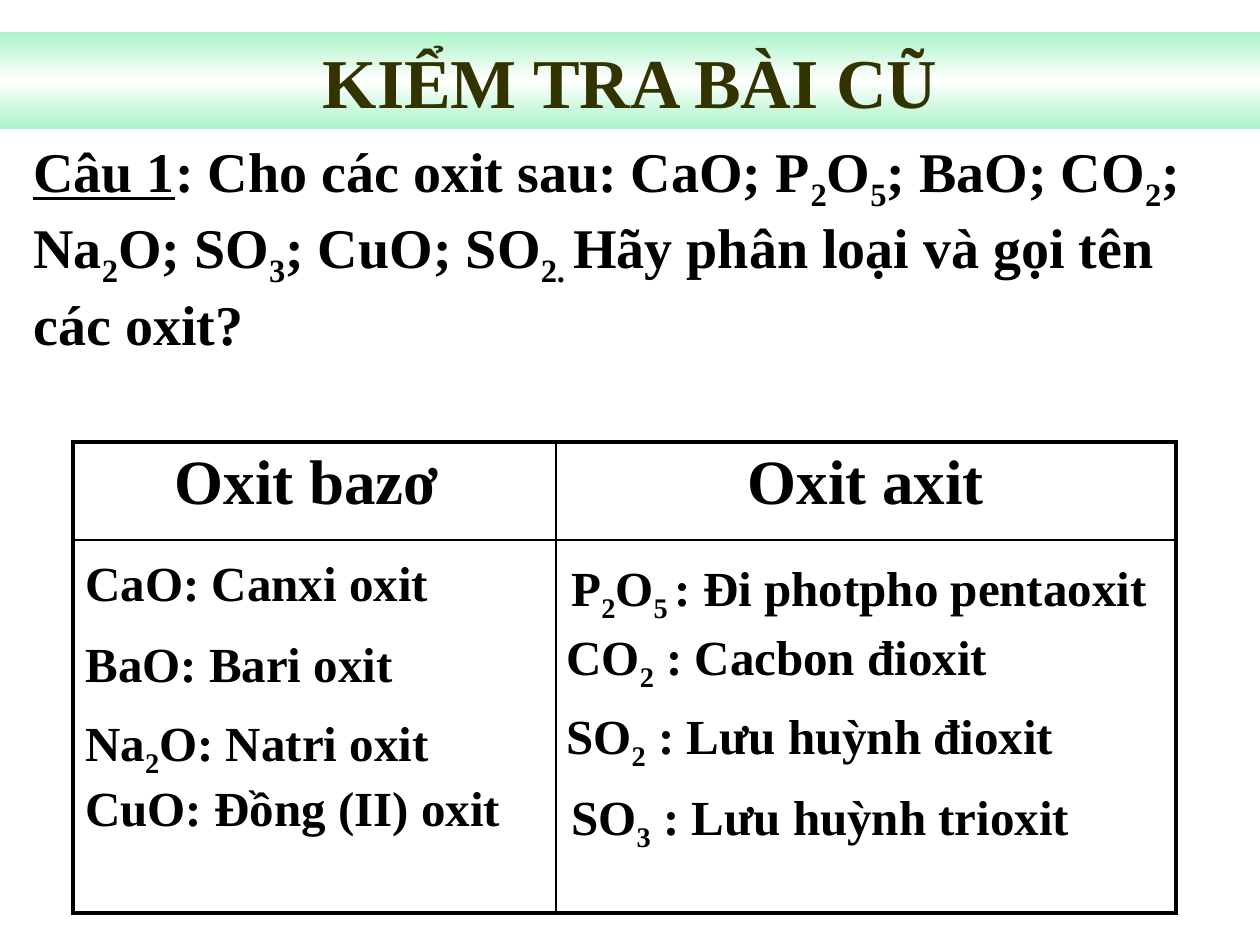
from copy import deepcopy
from dataclasses import dataclass

from lxml import etree
from pptx import Presentation
from pptx.dml.color import RGBColor
from pptx.enum.shapes import MSO_SHAPE
from pptx.enum.text import MSO_ANCHOR, MSO_AUTO_SIZE, PP_ALIGN
from pptx.oxml.ns import qn
from pptx.util import Pt

RECTANGLE = MSO_SHAPE.RECTANGLE
TOP = MSO_ANCHOR.TOP
GROW = MSO_AUTO_SIZE.SHAPE_TO_FIT_TEXT
CENTER = PP_ALIGN.CENTER
LEFT = PP_ALIGN.LEFT

EMU_PER_PX = 914400 / 126
FONT = "Times New Roman"
COLORS = {"text": "000000", "title": "333300", "mint": "AAF4C8", "white": "FFFFFF"}
THICK, THIN = 2.25, 1


@dataclass(frozen=True)
class TextBox:
    left: int
    top: int
    width: int
    height: int
    text: str
    size: int = 28


QUESTION = TextBox(
    21, 130, 1218, 217,
    "<Câu 1>: Cho các oxit sau: CaO; P[2]O[5]; BaO; CO[2]; Na[2]O; SO[3]; "
    "CuO; SO[2. ]Hãy phân loại và gọi tên các oxit?",
    32,
)
ANSWERS = [
    TextBox(73, 546, 599, 72, "CaO: Canxi oxit"),
    TextBox(73, 627, 420, 72, "BaO: Bari oxit"),
    TextBox(73, 706, 420, 72, "Na[2]O: Natri oxit"),
    TextBox(73, 771, 441, 72, "CuO: Đồng (II) oxit"),
    TextBox(559, 551, 617, 72, "P[2]O[5 ]: Đi photpho pentaoxit"),
    TextBox(554, 620, 643, 72, "CO[2] : Cacbon đioxit"),
    TextBox(554, 699, 622, 72, "SO[2] : Lưu huỳnh đioxit"),
    TextBox(559, 780, 617, 72, "SO[3] : Lưu huỳnh trioxit"),
]
HEADERS = ["Oxit bazơ ", "Oxit axit"]
COLUMN_WIDTHS = [483, 620]
ROW_HEIGHTS = [98, 373]


def px(length: int) -> int:
    return round(length * EMU_PER_PX)


def color(name: str) -> RGBColor:
    return RGBColor.from_string(COLORS[name])


def style_font(font, size: int, color_name: str = "text") -> None:
    font.name = FONT
    font.size = Pt(size)
    font.bold = True
    font.color.rgb = color(color_name)


def write_marked_text(paragraph, text: str, size: int) -> None:
    marks = {"[": "subscript", "<": "underline", "]": "", ">": ""}
    pieces = [("", "")]
    for character in text:
        if character in marks:
            pieces.append((marks[character], ""))
        else:
            kind, content = pieces[-1]
            pieces[-1] = (kind, content + character)
    for kind, content in pieces:
        if not content:
            continue
        run = paragraph.add_run()
        run.text = content
        style_font(run.font, size)
        if kind == "underline":
            run.font.underline = True
        elif kind == "subscript":
            run.font._element.set("baseline", "-25000")


def add_text_box(slide, box: TextBox) -> None:
    shape = slide.shapes.add_textbox(px(box.left), px(box.top), px(box.width), px(box.height))
    text_frame = shape.text_frame
    text_frame.word_wrap = True
    text_frame.auto_size = GROW
    paragraph = text_frame.paragraphs[0]
    paragraph.alignment = LEFT
    write_marked_text(paragraph, box.text, box.size)


def add_title_band(slide) -> None:
    band = slide.shapes.add_shape(RECTANGLE, 0, px(32), px(1260), px(97))
    band.shadow.inherit = False
    band.line.fill.background()
    band.fill.gradient()
    band.fill.gradient_angle = 90
    for stop, name, position in zip(band.fill.gradient_stops, ("mint", "white"), (0, 0.5)):
        stop.color.rgb = color(name)
        stop.position = position
    stop_list = band._element.spPr.find(qn("a:gradFill")).find(qn("a:gsLst"))
    last_stop = deepcopy(stop_list[0])
    last_stop.set("pos", "100000")
    stop_list.append(last_stop)
    text_frame = band.text_frame
    text_frame.text = "KIỂM TRA BÀI CŨ"
    text_frame.word_wrap = True
    text_frame.auto_size = GROW
    text_frame.vertical_anchor = TOP
    paragraph = text_frame.paragraphs[0]
    paragraph.alignment = CENTER
    style_font(paragraph.runs[0].font, 40, "title")


def set_cell_borders(cell, widths: dict[str, float]) -> None:
    properties = cell._tc.get_or_add_tcPr()
    for index, (side, width) in enumerate(widths.items()):
        line = etree.Element(qn(f"a:ln{side}"), w=str(Pt(width)))
        fill = etree.SubElement(line, qn("a:solidFill"))
        etree.SubElement(fill, qn("a:srgbClr"), val=COLORS["text"])
        properties.insert(index, line)


def add_oxide_table(slide) -> None:
    frame = slide.shapes.add_table(
        2, 2, px(73), px(442), px(sum(COLUMN_WIDTHS)), px(sum(ROW_HEIGHTS))
    )
    table = frame.table
    table.first_row = False
    table.horz_banding = False
    for column, width in zip(table.columns, COLUMN_WIDTHS):
        column.width = px(width)
    for row, height in zip(table.rows, ROW_HEIGHTS):
        row.height = px(height)
    for row_index in range(2):
        for column_index in range(2):
            cell = table.cell(row_index, column_index)
            cell.fill.background()
            set_cell_borders(cell, {
                "L": THIN if column_index else THICK,
                "R": THICK if column_index else THIN,
                "T": THIN if row_index else THICK,
                "B": THICK if row_index else THIN,
            })
    for column_index, header in enumerate(HEADERS):
        paragraph = table.cell(0, column_index).text_frame.paragraphs[0]
        paragraph.text = header
        paragraph.alignment = CENTER
        style_font(paragraph.runs[0].font, 36)


def main() -> None:
    presentation = Presentation()
    presentation.slide_width = px(1260)
    presentation.slide_height = px(945)
    slide = presentation.slides.add_slide(presentation.slide_layouts[6])
    add_oxide_table(slide)
    add_text_box(slide, QUESTION)
    add_title_band(slide)
    for answer in ANSWERS:
        add_text_box(slide, answer)
    presentation.save("out.pptx")


if __name__ == "__main__":
    main()
